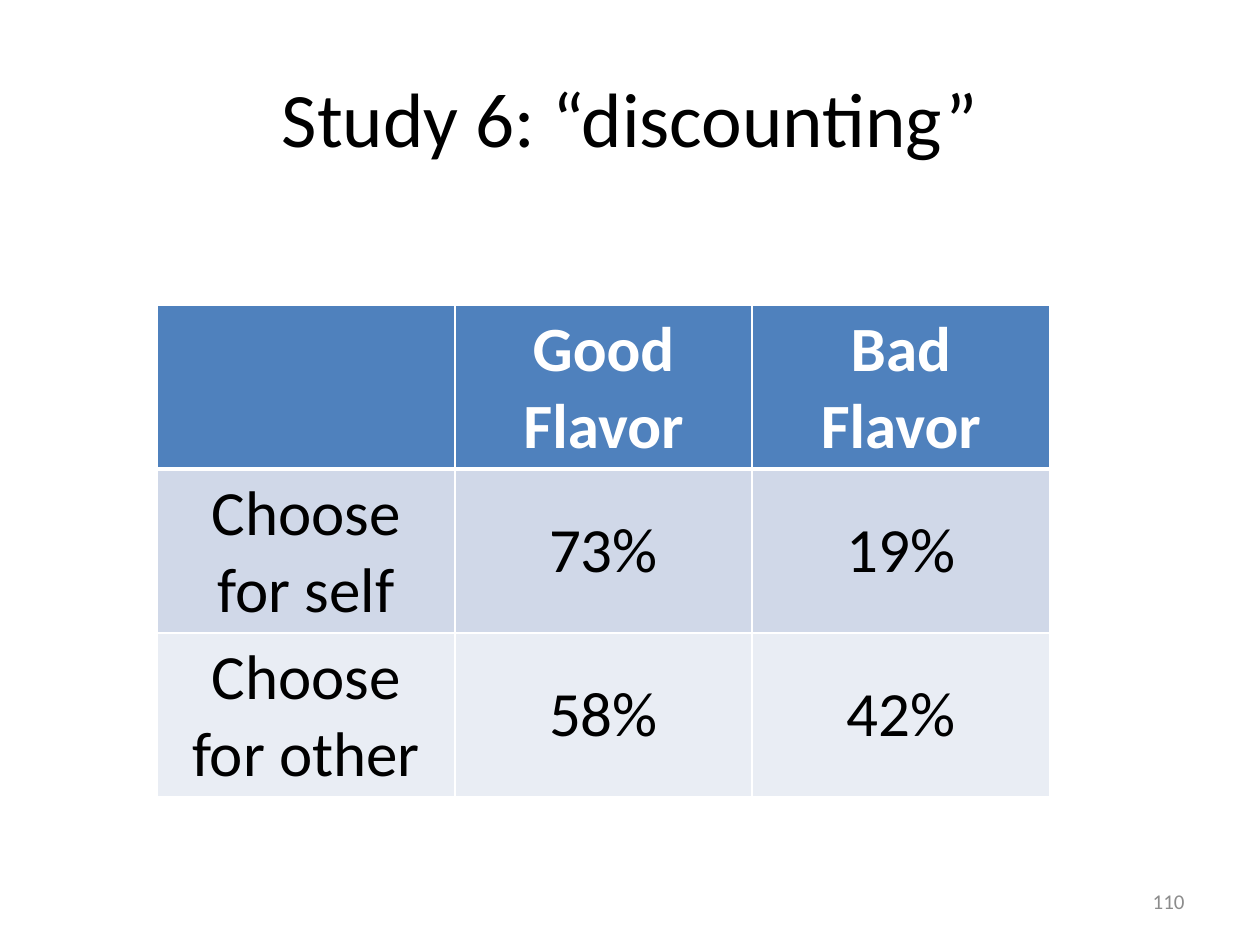
"""Build the Study 6 slide: a title, a table of flavor choices and a page number."""
from dataclasses import dataclass

from lxml.etree import SubElement
from pptx import Presentation
from pptx.dml.color import RGBColor
from pptx.enum.text import MSO_ANCHOR as Anchor, PP_ALIGN as Align
from pptx.oxml.ns import qn
from pptx.util import Inches, Pt

WIDTH, HEIGHT = Inches(10), Inches(7.5)
FONT = "Calibri"
COLORS = {
    "ink": "000000", "paper": "FFFFFF", "page": "8C8C8C",
    "header": "4F81BD", "self": "D0D8E8", "other": "E9EDF4",
}


@dataclass(frozen=True)
class Area:
    """Hold a rectangle as shares of the slide's size."""
    left: float
    top: float
    width: float
    height: float

    def lengths(self) -> tuple[int, int, int, int]:
        """Return left, top, width and height in slide units."""
        return (int(self.left * WIDTH), int(self.top * HEIGHT),
                int(self.width * WIDTH), int(self.height * HEIGHT))


@dataclass(frozen=True)
class TextStyle:
    """Describe how a text looks."""
    size: int
    color: str = "ink"
    bold: bool = False
    align: Align = Align.CENTER


@dataclass(frozen=True)
class ChoiceRow:
    """Describe one row of the table."""
    labels: tuple[str, str, str]
    fill: str
    style: TextStyle
    top_line: int = 1
    bottom_line: int = 1


BODY = TextStyle(36)
HEADING = TextStyle(36, "paper", bold=True)
CHOICES = (
    ChoiceRow(("", "Good Flavor", "Bad Flavor"), "header", HEADING, bottom_line=3),
    ChoiceRow(("Choose for self", "73%", "19%"), "self", BODY, top_line=3),
    ChoiceRow(("Choose for other", "58%", "42%"), "other", BODY),
)


def write(frame, text: str, style: TextStyle) -> None:
    """Set a text frame's words and format its runs."""
    frame.text = text
    frame.word_wrap = True
    for paragraph in frame.paragraphs:
        paragraph.alignment = style.align
        for run in paragraph.runs:
            run.font.name, run.font.size, run.font.bold = FONT, Pt(style.size), style.bold
            run.font.color.rgb = RGBColor.from_string(COLORS[style.color])


def draw_borders(cell, row: ChoiceRow) -> None:
    """Give a cell its four white borders."""
    properties = cell._tc.get_or_add_tcPr()
    for side, points in (("L", 1), ("R", 1), ("T", row.top_line), ("B", row.bottom_line)):
        line = SubElement(properties, qn(f"a:ln{side}"), w=str(Pt(points)))
        SubElement(SubElement(line, qn("a:solidFill")), qn("a:srgbClr"), val=COLORS["paper"])


def draw_choices(slide, area: Area, rows: tuple[ChoiceRow, ...]) -> None:
    """Draw the table with equal columns and rows."""
    table = slide.shapes.add_table(len(rows), len(rows[0].labels), *area.lengths()).table
    for row_index, row in enumerate(rows):
        for column_index, label in enumerate(row.labels):
            cell = table.cell(row_index, column_index)
            write(cell.text_frame, label, row.style)
            cell.vertical_anchor = Anchor.MIDDLE
            draw_borders(cell, row)
            cell.fill.solid()
            cell.fill.fore_color.rgb = RGBColor.from_string(COLORS[row.fill])


def main() -> None:
    """Build the slide and save it."""
    deck = Presentation()
    deck.slide_width, deck.slide_height = WIDTH, HEIGHT
    slide = deck.slides.add_slide(deck.slide_layouts[5])

    title = slide.shapes.title
    title.left, title.top, title.width, title.height = Area(0.05, 0.04, 0.9, 1 / 6).lengths()
    write(title.text_frame, "Study 6: “discounting”", TextStyle(44))

    page_number = slide.shapes.add_textbox(*Area(0.717, 0.927, 0.233, 0.053).lengths())
    write(page_number.text_frame, "110", TextStyle(12, "page", align=Align.RIGHT))

    for heading in (title, page_number):
        heading.text_frame.vertical_anchor = Anchor.MIDDLE

    draw_choices(slide, Area(0.125, 0.323, 0.708, 0.52), CHOICES)
    deck.save("out.pptx")


if __name__ == "__main__":
    main()
